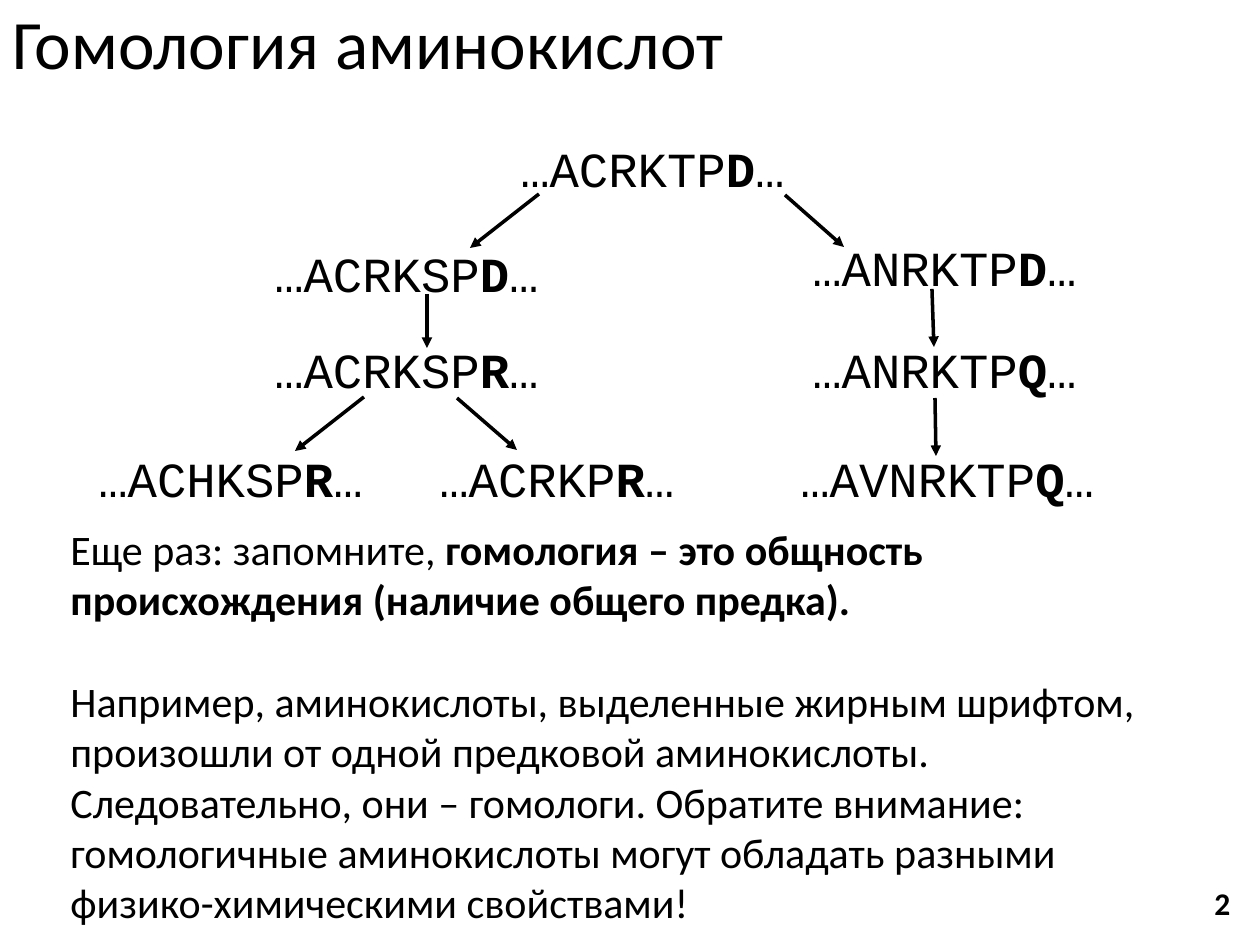
from dataclasses import dataclass

from lxml.etree import SubElement
from pptx import Presentation
from pptx.dml.color import RGBColor
from pptx.enum.shapes import MSO_CONNECTOR
from pptx.enum.text import MSO_ANCHOR, MSO_AUTO_SIZE, PP_ALIGN
from pptx.oxml.ns import qn
from pptx.util import Emu, Pt

PX = 914400 // 126


@dataclass(frozen=True)
class Theme:
    ink: RGBColor = RGBColor(0, 0, 0)
    paper: RGBColor = RGBColor(255, 255, 255)
    text_font: str = "Calibri"
    sequence_font: str = "Courier New"
    title_size: float = 39.6
    sequence_size: int = 28
    body_size: int = 24
    number_size: int = 18
    arrow_width: int = 2


THEME = Theme()

# Left, top, conserved part, highlighted residue
SEQUENCES = [
    (508, 132, "ACRKTP", "D"),
    (262, 237, "ACRKSP", "D"),
    (262, 333, "ACRKSP", "R"),
    (86, 442, "ACHKSP", "R"),
    (427, 442, "ACRKP", "R"),
    (800, 231, "ANRKTP", "D"),
    (800, 333, "ANRKTP", "Q"),
    (788, 442, "AVNRKTP", "Q"),
]

# Ancestor end, descendant end
DESCENTS = [
    ((539, 194), (470, 248)),
    ((427, 294), (427, 348)),
    ((364, 397), (295, 451)),
    ((457, 398), (517, 450)),
    ((785, 195), (844, 247)),
    ((932, 289), (934, 347)),
    ((935, 398), (936, 456)),
]

EXPLANATION = [
    [("Еще раз: запомните, ", False),
     ("гомология – это общность происхождения (наличие общего предка).", True)],
    [("Например, аминокислоты, выделенные жирным шрифтом, произошли от одной "
      "предковой аминокислоты. Следовательно, они – гомологи. Обратите внимание: "
      "гомологичные аминокислоты могут обладать разными физико-химическими "
      "свойствами!", False)],
]


def px(*lengths):
    return [Emu(length * PX) for length in lengths]


def apply_format(target, values):
    for name, value in values.items():
        setattr(target, name, value)


def add_run(paragraph, text, font, size, bold=False):
    run = paragraph.add_run()
    run.text = text
    apply_format(run.font, {"name": font, "size": Pt(size), "bold": bold})
    run.font.color.rgb = THEME.ink


def set_title(slide, text):
    title = slide.shapes.title
    apply_format(title, dict(zip(("left", "top", "width", "height"),
                                 px(0, 0, 1260, 95))))
    apply_format(title.text_frame, {"vertical_anchor": MSO_ANCHOR.MIDDLE,
                                    "word_wrap": True,
                                    "auto_size": MSO_AUTO_SIZE.NONE})
    heading = title.text_frame.paragraphs[0]
    apply_format(heading, {"alignment": PP_ALIGN.LEFT, "line_spacing": 0.9})
    add_run(heading, text, THEME.text_font, THEME.title_size)


def add_text(slide, box, paragraphs, font, size, wrap=False, gap=0):
    frame = slide.shapes.add_textbox(*px(*box)).text_frame
    apply_format(frame, {"word_wrap": wrap,
                         "auto_size": MSO_AUTO_SIZE.SHAPE_TO_FIT_TEXT})
    for index, runs in enumerate(paragraphs):
        paragraph = frame.add_paragraph() if index else frame.paragraphs[0]
        if index:
            paragraph.space_before = Pt(gap)
        for text, bold in runs:
            add_run(paragraph, text, font, size, bold)


def add_sequence(slide, left, top, conserved, residue):
    # The box is as wide as its monospaced letters, two ellipses and insets
    letters = len(conserved) + len(residue) + 2
    width = round(29.5 * letters + 26)
    runs = [("…" + conserved, False), (residue, True), ("…", False)]
    add_text(slide, (left, top, width, 72), [runs],
             THEME.sequence_font, THEME.sequence_size)


def add_arrow(slide, start, end):
    arrow = slide.shapes.add_connector(MSO_CONNECTOR.STRAIGHT, *px(*start, *end))
    arrow.line.color.rgb = THEME.ink
    arrow.line.width = Pt(THEME.arrow_width)
    properties = arrow.line._get_or_add_ln()
    SubElement(properties, qn("a:tailEnd"), type="triangle")
    SubElement(arrow._element.spPr, qn("a:effectLst"))


def main():
    deck = Presentation()
    deck.slide_width, deck.slide_height = px(1260, 945)
    slide = deck.slides.add_slide(deck.slide_layouts[5])
    slide.background.fill.solid()
    slide.background.fill.fore_color.rgb = THEME.paper

    set_title(slide, "Гомология аминокислот")

    # Family tree of the sequences
    for sequence in SEQUENCES:
        add_sequence(slide, *sequence)
    for ancestor, descendant in DESCENTS:
        add_arrow(slide, ancestor, descendant)

    # Explanation, with one line of space between its paragraphs
    add_text(slide, (58, 517, 1145, 420), EXPLANATION, THEME.text_font,
             THEME.body_size, wrap=True, gap=29.3)

    # Slide number
    add_text(slide, (1202, 878, 42, 50), [[("2", True)]],
             THEME.text_font, THEME.number_size)

    deck.save("out.pptx")


if __name__ == "__main__":
    main()
